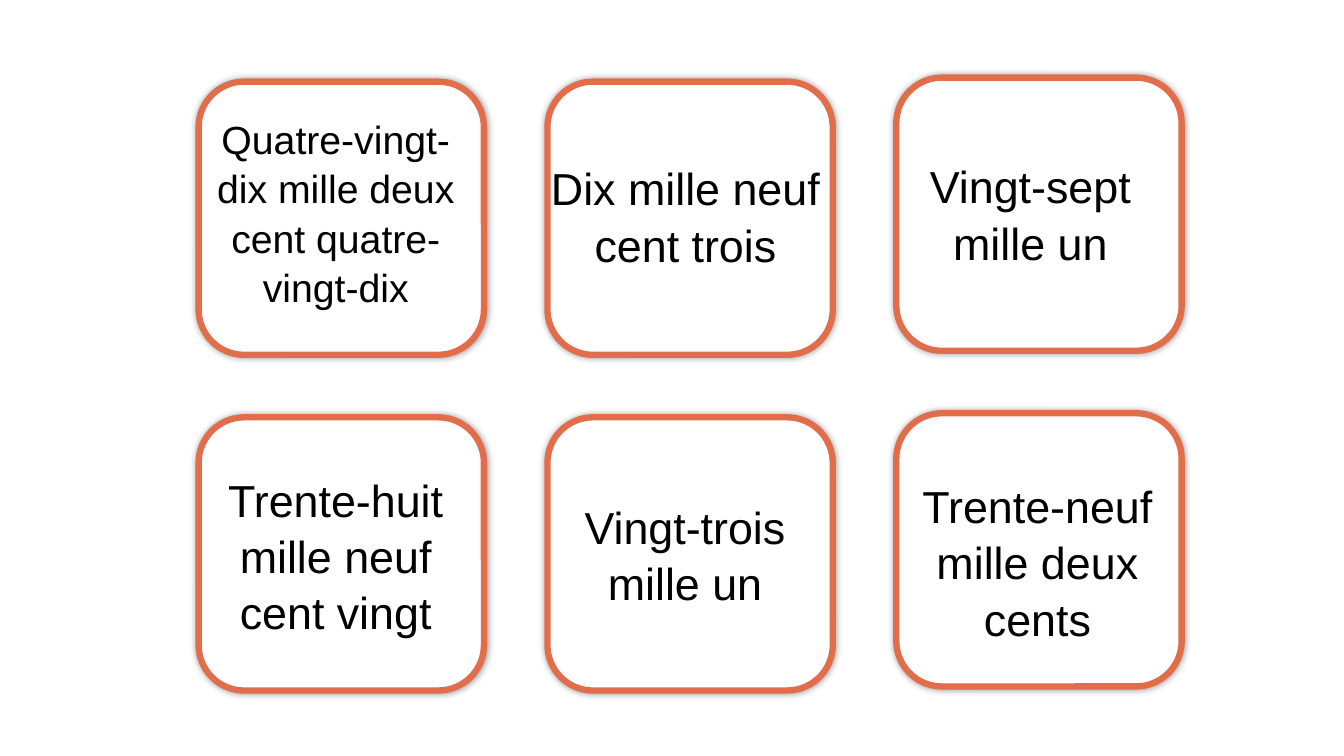
"""Build a slide of six number cards written out in French."""
from dataclasses import dataclass

import pptx
import pptx.dml.color
import pptx.enum.shapes
import pptx.enum.text
import pptx.oxml
import pptx.oxml.ns
import pptx.slide
import pptx.util
from pptx.util import Inches

BLACK = pptx.dml.color.RGBColor(0x00, 0x00, 0x00)
WHITE = pptx.dml.color.RGBColor(0xFF, 0xFF, 0xFF)
CORAL = pptx.dml.color.RGBColor(0xE1, 0x6D, 0x4B)

CARD_WIDTH, CARD_HEIGHT = 2.83, 2.71
FIRST_LEFT, COLUMN_STEP = 1.97, 3.46
COLUMN_TOPS = (0.81, 0.81, 0.77)
ROW_STEP = 3.33
COLUMNS = 3

GLOW = (
    f'<a:outerShdw {pptx.oxml.ns.nsdecls("a")} blurRad="63500" dist="0" dir="0">'
    '<a:srgbClr val="000000"><a:alpha val="40000"/></a:srgbClr></a:outerShdw>'
)


@dataclass(frozen=True)
class NumberLabel:
    words: str
    left: float
    top: float
    width: float
    height: float
    size: int = 32


LABELS = (
    NumberLabel("Quatre-vingt-dix mille deux cent quatre-vingt-dix", 1.88, 1.07, 2.9, 1.99, 28),
    NumberLabel("Dix mille neuf cent trois", 5.2, 1.52, 3.2, 1.18),
    NumberLabel("Vingt-sept mille un", 8.62, 1.5, 3.2, 1.18),
    NumberLabel("Trente-huit mille neuf cent vingt", 1.92, 4.61, 2.82, 1.72),
    NumberLabel("Vingt-trois mille un", 5.38, 4.88, 2.83, 1.18),
    NumberLabel("Trente-neuf mille deux cents", 8.62, 4.67, 3.34, 1.72),
)


def draw_card(page: pptx.slide.Slide, row: int, column: int) -> None:
    card = page.shapes.add_shape(
        pptx.enum.shapes.MSO_SHAPE.ROUNDED_RECTANGLE,
        Inches(FIRST_LEFT + column * COLUMN_STEP),
        Inches(COLUMN_TOPS[column] + row * ROW_STEP),
        Inches(CARD_WIDTH),
        Inches(CARD_HEIGHT),
    )
    card.fill.solid()
    card.fill.fore_color.rgb = WHITE
    card.line.color.rgb = CORAL
    card.line.width = pptx.util.Pt(4.5)
    card.shadow.inherit = False
    effects = card.element.spPr.find(pptx.oxml.ns.qn("a:effectLst"))
    effects.append(pptx.oxml.parse_xml(GLOW))


def draw_label(page: pptx.slide.Slide, label: NumberLabel) -> None:
    box = page.shapes.add_textbox(
        Inches(label.left), Inches(label.top), Inches(label.width), Inches(label.height)
    )
    box.text_frame.word_wrap = True
    box.text_frame.auto_size = pptx.enum.text.MSO_AUTO_SIZE.SHAPE_TO_FIT_TEXT
    para = box.text_frame.paragraphs[0]
    para.alignment = pptx.enum.text.PP_ALIGN.CENTER
    para.line_spacing = 1.05
    span = para.add_run()
    span.text = label.words
    for name, value in {"name": "Arial", "size": pptx.util.Pt(label.size)}.items():
        setattr(span.font, name, value)
    span.font.color.rgb = BLACK


def main() -> None:
    deck = pptx.Presentation()
    deck.slide_width, deck.slide_height = Inches(13.33), Inches(7.5)
    page = deck.slides.add_slide(deck.slide_layouts[6])
    for index in range(len(LABELS)):
        draw_card(page, *divmod(index, COLUMNS))
    for label in LABELS:
        draw_label(page, label)
    deck.save("out.pptx")


if __name__ == "__main__":
    main()
